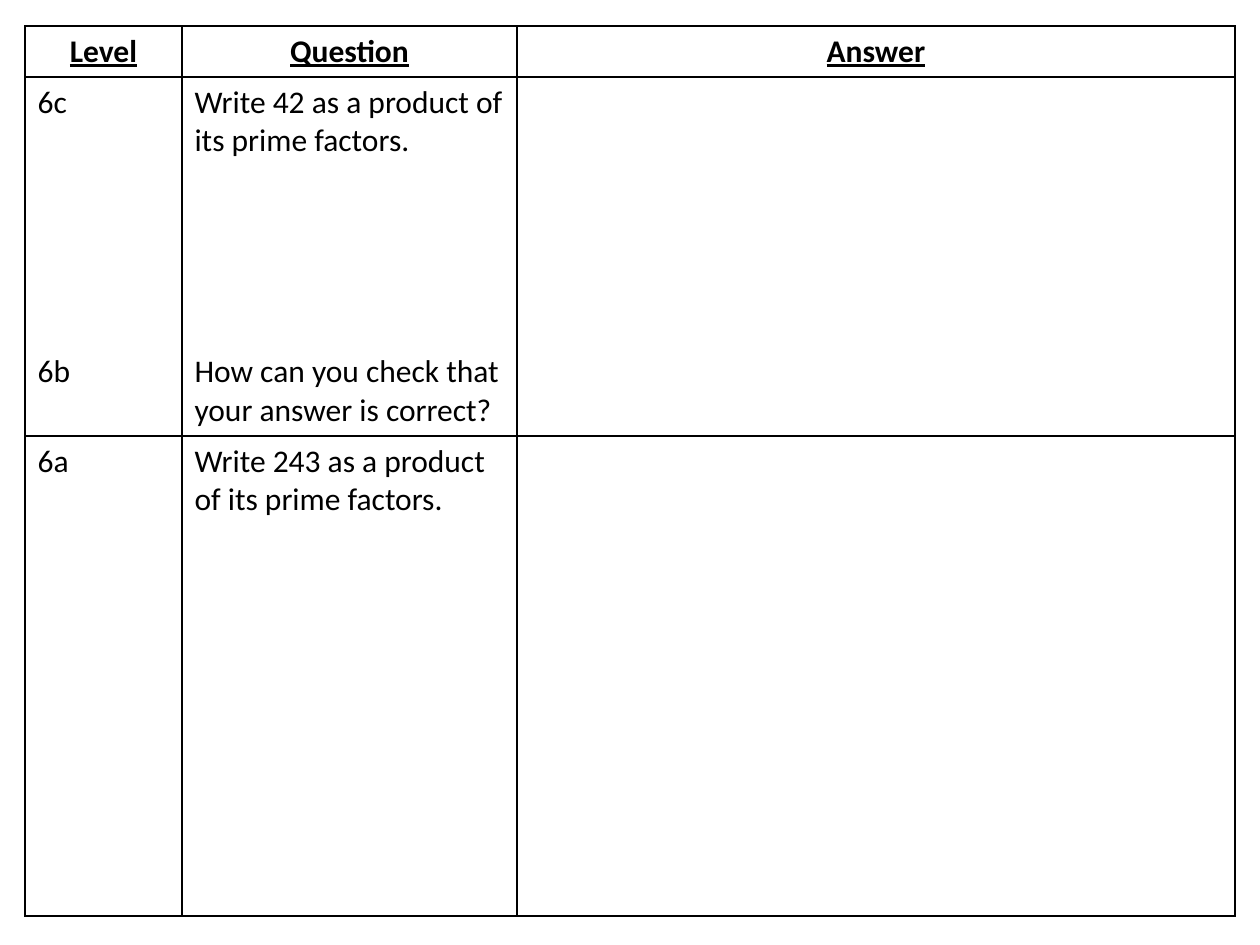
from pptx import Presentation, util as u
from pptx.dml.color import RGBColor
from pptx.enum import text
from pptx.oxml import parse_xml
from pptx.oxml.ns import nsdecls

BLACK = RGBColor(0, 0, 0)
SCALE = 914400 / 126
HEADS = ["Level", "Question", "Answer"]
ROWS = [
    (["6c", "6b"],
     ["Write 42 as a product of its prime factors.",
      "How can you check that your answer is correct?"], []),
    (["6a"], ["Write 243 as a product of its prime factors."], []),
]
GAPS = [132, 110, 0]


def px(size):
    return u.Emu(round(size * SCALE))


class Sheet:
    """Hold the worksheet style and the current slide."""

    def __init__(self, deck, font="Calibri", size=18, ink=BLACK):
        self.font, self.size, self.ink = font, u.Pt(size), ink
        self.slide = deck.slides.add_slide(deck.slide_layouts[6])

    def table(self, left, top, cols, rows):
        frame = self.slide.shapes.add_table(
            len(rows), len(cols), px(left), px(top), px(sum(cols)), px(sum(rows)))
        grid = frame.table
        grid.first_row = grid.horz_banding = False
        for col, width in zip(grid.columns, cols):
            col.width = px(width)
        for row, height in zip(grid.rows, rows):
            row.height = px(height)
        return grid

    def border(self, cell, width=1):
        props = cell._tc.get_or_add_tcPr()
        for at, side in enumerate(["lnL", "lnR", "lnT", "lnB"]):
            props.insert(at, parse_xml(
                f'<a:{side} {nsdecls("a")} w="{u.Pt(width)}"><a:solidFill>'
                f'<a:srgbClr val="{self.ink}"/></a:solidFill></a:{side}>'))

    def cell(self, cell, lines, gap=0, head=False):
        cell.fill.background()
        self.border(cell)
        cell.text_frame.text = "\n".join(lines)
        for at, para in enumerate(cell.text_frame.paragraphs):
            para.alignment = text.PP_ALIGN.CENTER if head else text.PP_ALIGN.LEFT
            para.font.size = self.size
            if at:
                para.space_before = u.Pt(gap)
            for run in para.runs:
                font = run.font
                font.name, font.size = self.font, self.size
                font.bold = font.underline = head
                font.color.rgb = self.ink


def main():
    deck = Presentation()
    deck.slide_width, deck.slide_height = px(1260), px(945)
    sheet = Sheet(deck)
    grid = sheet.table(25, 26, [157, 335, 718], [51, 358, 480])
    for col, (name, gap) in enumerate(zip(HEADS, GAPS)):
        sheet.cell(grid.cell(0, col), [name], head=True)
        for row, items in enumerate(ROWS, 1):
            sheet.cell(grid.cell(row, col), items[col], gap)
    deck.save("out.pptx")


if __name__ == "__main__":
    main()
